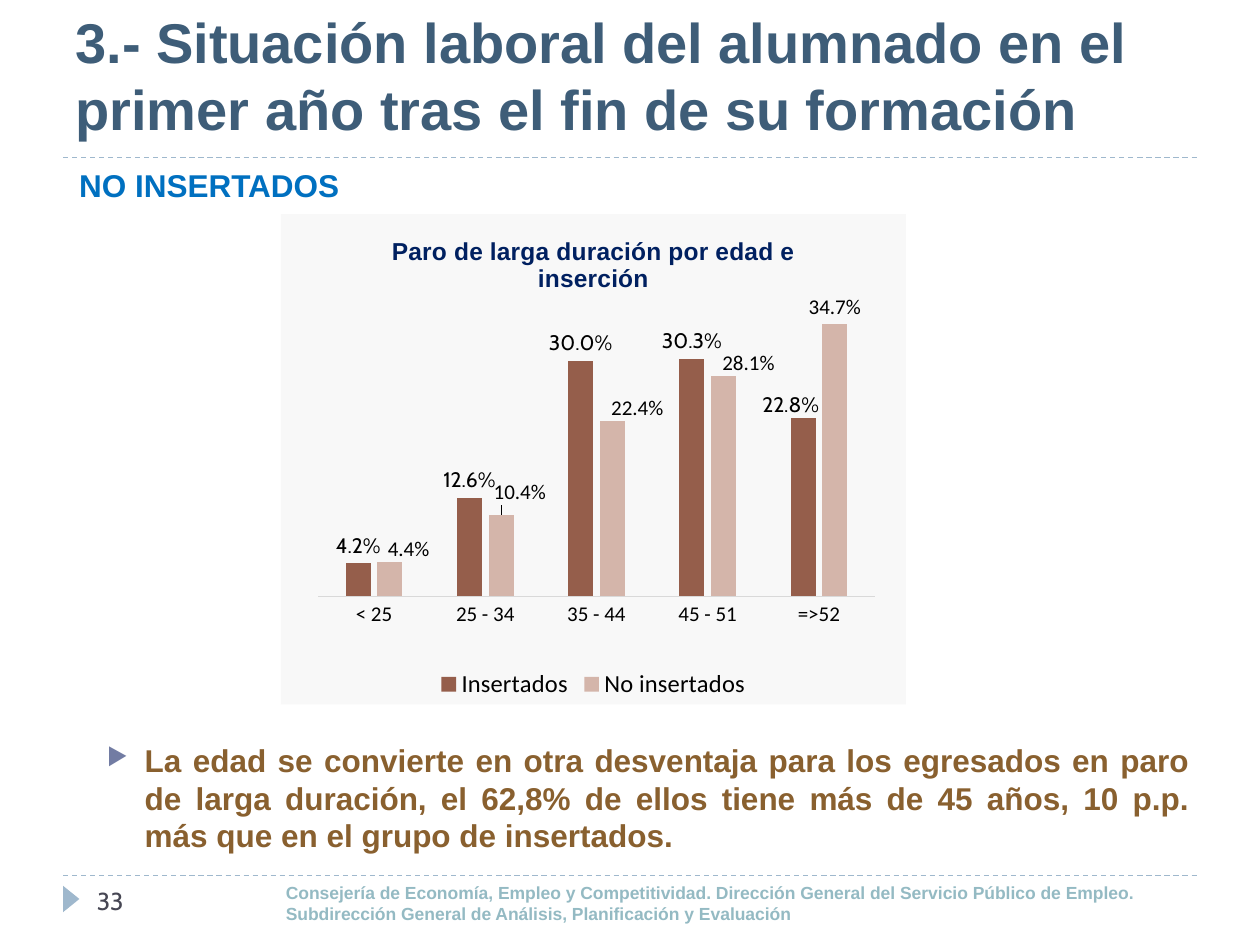
from lxml import etree
from pptx import Presentation
from pptx.chart.data import CategoryChartData
from pptx.dml.color import RGBColor
from pptx.enum.chart import XL_CHART_TYPE, XL_LABEL_POSITION, XL_LEGEND_POSITION, XL_TICK_MARK
from pptx.enum.dml import MSO_LINE
from pptx.enum.shapes import MSO_CONNECTOR, MSO_SHAPE
from pptx.enum.text import MSO_ANCHOR, PP_ALIGN
from pptx.oxml import parse_xml
from pptx.oxml.ns import nsdecls, qn
from pptx.util import Inches, Pt

COLUMN = XL_CHART_TYPE.COLUMN_CLUSTERED
OUTER = XL_LABEL_POSITION.OUTSIDE_END
BELOW = XL_LEGEND_POSITION.BOTTOM
NO_TICK = XL_TICK_MARK.NONE
DASH = MSO_LINE.DASH
STRAIGHT = MSO_CONNECTOR.STRAIGHT
TRIANGLE = MSO_SHAPE.ISOSCELES_TRIANGLE
MIDDLE, BOTTOM, TOP = MSO_ANCHOR.MIDDLE, MSO_ANCHOR.BOTTOM, MSO_ANCHOR.TOP
JUSTIFY, LEFT = PP_ALIGN.JUSTIFY, PP_ALIGN.LEFT

COLORS = {
    "rule": "9FB8CD", "footer": "94BAC3", "number": "464653", "title": "3E5D78",
    "head": "0070C0", "note": "89602F", "bullet": "727CA3", "black": "000000",
    "navy": "002060", "axis": "D9D9D9", "panel": "F2F2F2",
    "brown": "955E4B", "pink": "D4B5AA",
}
AGES = ["< 25", "25 - 34", "35 - 44", "45 - 51", "=>52"]
GROUPS = [
    {"name": "Insertados", "color": "brown", "font": "Cabin",
     "values": [0.042, 0.126, 0.3, 0.303, 0.228], "shifts": {4: (-0.02, 0.01)}},
    {"name": "No insertados", "color": "pink", "font": "Calibri",
     "values": [0.044, 0.104, 0.224, 0.281, 0.347],
     "shifts": {0: (0.03, 0.01), 1: (0.03, -0.01), 2: (0.04, 0.01), 3: (0.04, 0.01)}},
]


def rgb(key):
    """Return the named colour."""
    return RGBColor.from_string(COLORS[key])


def style(font, size, color, name="Arial", bold=True):
    """Set the look of a font."""
    for key, value in {"size": Pt(size), "name": name, "bold": bold}.items():
        setattr(font, key, value)
    font.color.rgb = rgb(color)


def add_text(slide, box, lines, size, color, name="Arial", bold=True,
             anchor=MIDDLE, align=LEFT, low=0.05):
    """Add a text box with one paragraph per line and return its frame."""
    frame = slide.shapes.add_textbox(*map(Inches, box)).text_frame
    form = {"word_wrap": True, "vertical_anchor": anchor, "margin_bottom": Inches(low)}
    for key, value in form.items():
        setattr(frame, key, value)
    for i, line in enumerate(lines):
        para = frame.paragraphs[0] if i == 0 else frame.add_paragraph()
        para.alignment = align
        run = para.add_run()
        run.text = line
        style(run.font, size, color, name, bold)
    return frame


def add_rule(slide, left, top, width):
    """Draw a dashed horizontal rule."""
    ends = map(Inches, (left, top, left + width, top))
    rule = slide.shapes.add_connector(STRAIGHT, *ends)
    rule.line.color.rgb = rgb("rule")
    rule.line.width = Pt(0.75)
    rule.line.dash_style = DASH
    etree.SubElement(rule._element.spPr, qn("a:effectLst"))


def add_header(slide, left, top, width):
    """Place the title, its rule and the section heading."""
    add_text(slide, (left, top, width, 1.18),
             ["3.- Situación laboral del alumnado en el primer año tras el fin de su formación"],
             32, "title")
    add_rule(slide, left, top + 1.25, width)
    add_text(slide, (left + 0.03, top + 1.17, 2.31, 0.53), ["NO INSERTADOS"],
             18, "head", anchor=BOTTOM, low=0.08)


def shift_label(label, series, index, dx, dy):
    """Move one data label by a share of the chart size."""
    label.position = OUTER
    style(label.font, 12, "black", series["font"], False)
    mark = series["plot"]._element.xpath(f".//c:dLbl[c:idx/@val='{index}']/c:idx")[0]
    mark.addnext(parse_xml(
        f'<c:layout {nsdecls("c")}><c:manualLayout>'
        f'<c:x val="{dx}"/><c:y val="{dy}"/></c:manualLayout></c:layout>'))


def style_group(plot, group):
    """Colour one series and place its data labels."""
    plot.format.fill.solid()
    plot.format.fill.fore_color.rgb = rgb(group["color"])
    labels = plot.data_labels
    form = {"show_value": True, "number_format": "0.0%",
            "number_format_is_linked": False, "position": OUTER}
    for key, value in form.items():
        setattr(labels, key, value)
    style(labels.font, 12, "black", group["font"], False)
    for index, (dx, dy) in group["shifts"].items():
        label = plot.points[index].data_label
        shift_label(label, {**group, "plot": plot}, index, dx, dy)


def style_axes(chart):
    """Set the age axis and hide the value axis."""
    ages, rates = chart.category_axis, chart.value_axis
    ages.major_tick_mark = NO_TICK
    ages.format.line.color.rgb = rgb("axis")
    ages.format.line.width = Pt(0.75)
    style(ages.tick_labels.font, 12, "black", "Calibri", False)
    form = {"minimum_scale": 0, "maximum_scale": 0.4,
            "has_major_gridlines": False, "visible": False}
    for key, value in form.items():
        setattr(rates, key, value)


def set_frame(chart):
    """Fix the plot area and fill the chart background."""
    area = chart._chartSpace.chart.plotArea
    for old in area.findall(qn("c:layout")):
        area.remove(old)
    sides = {"x": 0.06, "y": 0.14, "w": 0.89, "h": 0.64}
    parts = "".join(f'<c:{key} val="{value}"/>' for key, value in sides.items())
    area.insert(0, parse_xml(
        f'<c:layout {nsdecls("c")}><c:manualLayout><c:layoutTarget val="inner"/>'
        f'<c:xMode val="edge"/><c:yMode val="edge"/>{parts}</c:manualLayout></c:layout>'))
    chart._chartSpace.chart.addnext(parse_xml(
        f'<c:spPr {nsdecls("c", "a")}><a:solidFill><a:srgbClr val="{COLORS["panel"]}">'
        '<a:alpha val="48000"/></a:srgbClr></a:solidFill><a:ln><a:noFill/></a:ln></c:spPr>'))


def add_rates(slide, left, top, width, height):
    """Place the column chart of unemployment by age."""
    data = CategoryChartData(number_format="0.0%")
    data.categories = AGES
    for group in GROUPS:
        data.add_series(group["name"], group["values"])
    box = map(Inches, (left, top, width, height))
    chart = slide.shapes.add_chart(COLUMN, *box, data).chart
    style(chart.font, 11, "black", "Calibri", False)
    chart.has_title = True
    title = chart.chart_title.text_frame
    title.text = "Paro de larga duración por edad e inserción"
    style(title.paragraphs[0].runs[0].font, 14, "navy")
    chart.chart_title.include_in_layout = False
    chart.has_legend = True
    chart.legend.position = BELOW
    chart.legend.include_in_layout = False
    style(chart.legend.font, 14, "black", "Calibri", False)
    bars = chart.plots[0]
    for key, value in {"gap_width": 219, "overlap": -27, "vary_by_categories": False}.items():
        setattr(bars, key, value)
    for plot, group in zip(bars.series, GROUPS):
        style_group(plot, group)
    style_axes(chart)
    set_frame(chart)


def add_note(slide, left, top, width, height):
    """Place the bulleted conclusion."""
    frame = add_text(
        slide, (left, top, width, height),
        ["La edad se convierte en otra desventaja para los egresados en paro de larga duración, "
         "el 62,8% de ellos tiene más de 45 años, 10 p.p. más que en el grupo de insertados."],
        18, "note", anchor=TOP, align=JUSTIFY)
    props = frame.paragraphs[0]._p.get_or_add_pPr()
    props.set("marL", str(Inches(0.5)))
    props.set("indent", str(Inches(-0.3)))
    color = etree.SubElement(props, qn("a:buClr"))
    etree.SubElement(color, qn("a:srgbClr"), val=COLORS["bullet"])
    etree.SubElement(props, qn("a:buSzPct"), val="76000")
    etree.SubElement(props, qn("a:buChar"), char="▶")


def add_footer(slide, left, top, width):
    """Place the footer rule, marker, page number and credits."""
    add_rule(slide, left, top, width)
    box = map(Inches, (left - 0.04, top + 0.12, 0.21, 0.13))
    mark = slide.shapes.add_shape(TRIANGLE, *box)
    mark.rotation = 90
    mark.shadow.inherit = False
    mark.fill.solid()
    mark.fill.fore_color.rgb = rgb("rule")
    mark.line.fill.background()
    add_text(slide, (left + 0.17, top, 1.5, 0.4), ["33"], 14, "number", "Cabin", False)
    add_text(slide, (left + 1.67, top, 7.21, 0.44),
             ["Consejería de Economía, Empleo y Competitividad. "
              "Dirección General del Servicio Público de Empleo.",
              "Subdirección General de Análisis, Planificación y Evaluación"], 10, "footer")


def main():
    """Build and save the slide."""
    deck = Presentation()
    deck.slide_width, deck.slide_height = Inches(10), Inches(7.5)
    slide = deck.slides.add_slide(deck.slide_layouts[6])
    add_header(slide, 0.5, 0, 9)
    add_rates(slide, 2.23, 1.7, 4.96, 3.89)
    add_note(slide, 0.55, 5.83, 8.99, 1)
    add_footer(slide, 0.5, 6.95, 9)
    deck.save("out.pptx")


if __name__ == "__main__":
    main()
